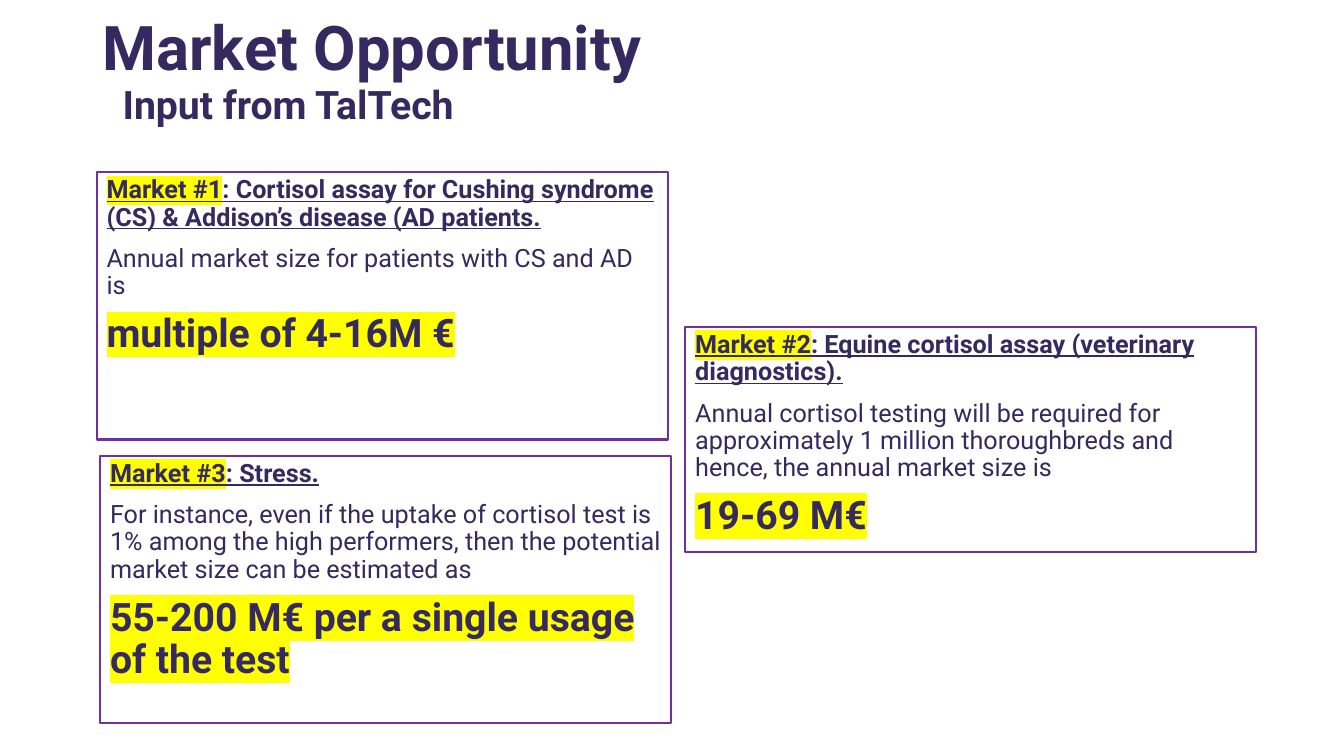
from lxml.etree import SubElement
from pptx import Presentation
from pptx.dml.color import RGBColor
from pptx.enum.shapes import MSO_SHAPE
from pptx.enum.text import MSO_ANCHOR, MSO_AUTO_SIZE, PP_ALIGN
from pptx.oxml.ns import qn
from pptx.util import Pt

INK = "342A5F"
BORDER = "7030A0"
MARKER = "FFFF00"
LEAD = {"size": Pt(18), "bold": True, "underline": True}
BODY = {"size": Pt(18), "bold": False}
FIGURE = {"size": Pt(28), "bold": True}
TITLE = {"size": Pt(44), "bold": True}

MARKETS = [
    ((69, 123, 408, 191), "Market #1",
     ": Cortisol assay for Cushing syndrome (CS) & Addison’s disease (AD patients.",
     "Annual market size for patients with CS and AD is",
     "multiple of 4-16M €"),
    ((489.5, 233.5, 408, 161), "Market #2",
     ": Equine cortisol assay (veterinary diagnostics).",
     "Annual cortisol testing will be required for approximately 1 million "
     "thoroughbreds and hence, the annual market size is",
     "19-69 M€"),
    ((71.5, 325.5, 408, 191), "Market #3",
     ": Stress.",
     "For instance, even if the uptake of cortisol test is 1% among the high "
     "performers, then the potential market size can be estimated as",
     "55-200 M€ per a single usage of the test"),
]


def color(value):
    """Return the colour for a hex string."""
    return RGBColor.from_string(value)


def set_values(target, values):
    """Set each named attribute on the target."""
    for name, value in values.items():
        setattr(target, name, value)


def add_run(paragraph, text, style, highlighted=False):
    """Append a styled run, highlighted on request."""
    run = paragraph.add_run()
    run.text = text
    set_values(run.font, {"name": "Roboto", **style})
    run.font.color.rgb = color(INK)
    if highlighted:
        properties = run.font.fill._xPr
        highlight = SubElement(properties, qn("a:highlight"))
        SubElement(highlight, qn("a:srgbClr"), val=MARKER)
        properties.find(qn("a:solidFill")).addnext(highlight)


def fill_text(frame, anchor, paragraphs):
    """Write paragraphs of (text, style, highlighted) runs into a text frame."""
    set_values(frame, {"word_wrap": True, "auto_size": MSO_AUTO_SIZE.NONE,
                       "vertical_anchor": anchor})
    for index, runs in enumerate(paragraphs):
        paragraph = frame.add_paragraph() if index else frame.paragraphs[0]
        set_values(paragraph, {"alignment": PP_ALIGN.LEFT, "line_spacing": 0.9,
                               "space_before": Pt(10 if index else 0)})
        for run in runs:
            add_run(paragraph, *run)


def add_heading(slide, left, top, width, height):
    """Place the title and its subtitle in the given box."""
    title = slide.shapes.title
    set_values(title, {"left": Pt(left), "top": Pt(top),
                       "width": Pt(width), "height": Pt(65)})
    fill_text(title.text_frame, MSO_ANCHOR.MIDDLE, [[("Market Opportunity", TITLE)]])
    subtitle = slide.shapes.add_textbox(
        Pt(left + 14.5), Pt(top + height - 40), Pt(256), Pt(40))
    fill_text(subtitle.text_frame, MSO_ANCHOR.BOTTOM, [[("Input from TalTech", FIGURE)]])


def add_market(slide, box, name, topic, description, figure):
    """Place one outlined market panel in the given box."""
    panel = slide.shapes.add_shape(MSO_SHAPE.RECTANGLE, *map(Pt, box))
    panel.shadow.inherit = False
    panel.fill.background()
    panel.line.color.rgb = color(BORDER)
    panel.line.width = Pt(1.5)
    fill_text(panel.text_frame, MSO_ANCHOR.TOP, [
        [(name, LEAD, True), (topic, LEAD)],
        [(description, BODY)],
        [(figure, FIGURE, True)],
    ])


def main():
    """Build and save the slide."""
    presentation = Presentation()
    set_values(presentation, {"slide_width": Pt(960), "slide_height": Pt(540)})
    slide = presentation.slides.add_slide(presentation.slide_layouts[5])
    add_heading(slide, 66, 3.5, 828, 91.5)
    for market in MARKETS:
        add_market(slide, *market)
    presentation.save("out.pptx")


if __name__ == "__main__":
    main()
